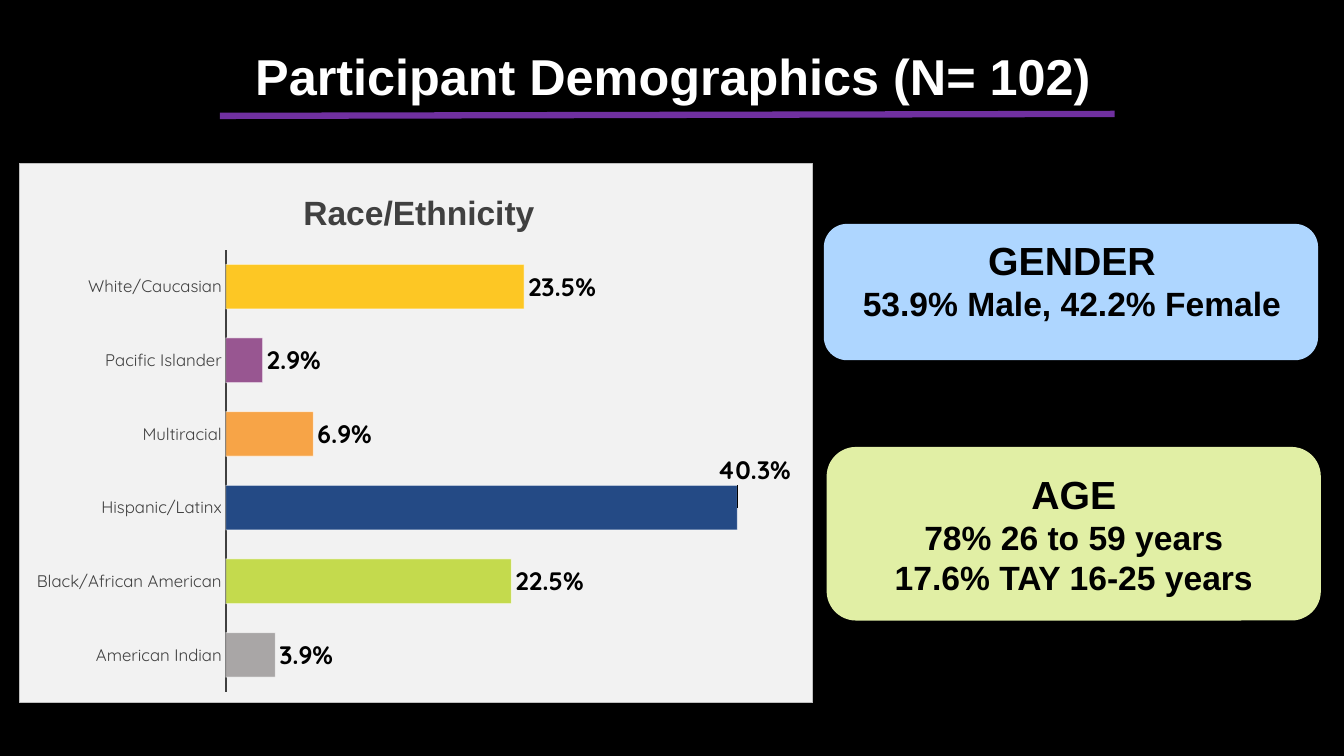
from dataclasses import dataclass

from lxml.etree import SubElement
from pptx import Presentation
from pptx.chart.chart import Chart
from pptx.chart.data import CategoryChartData
from pptx.dml.color import RGBColor
from pptx.dml.fill import FillFormat
from pptx.enum.chart import XL_CHART_TYPE, XL_LABEL_POSITION, XL_TICK_LABEL_POSITION, XL_TICK_MARK
from pptx.enum.shapes import MSO_CONNECTOR, MSO_SHAPE
from pptx.enum.text import MSO_ANCHOR, PP_ALIGN
from pptx.oxml import parse_xml
from pptx.oxml.ns import nsdecls, qn
from pptx.shapes.autoshape import Shape
from pptx.slide import Slide
from pptx.text.text import Font, TextFrame
from pptx.util import Cm, Pt


@dataclass
class Box:
    left: float
    top: float
    width: float
    height: float

    def lengths(self) -> tuple[Cm, Cm, Cm, Cm]:
        return Cm(self.left), Cm(self.top), Cm(self.width), Cm(self.height)


@dataclass
class Group:
    name: str
    share: float
    color: str


@dataclass
class Line:
    text: str
    size: int


GROUPS = [
    Group("American Indian", 0.039, "9D9999"),
    Group("Black/African American", 0.225, "BCD631"),
    Group("Hispanic/Latinx", 0.403, "002D73"),
    Group("Multiracial", 0.069, "F8972A"),
    Group("Pacific Islander", 0.029, "893B81"),
    Group("White/Caucasian", 0.235, "FFC000"),
]
RAISED_LABEL = 2
PERCENT = "0.0%"
GENDER = [Line("GENDER", 28), Line("53.9% Male, 42.2% Female", 24)]
AGE = [Line("AGE", 28), Line("78% 26 to 59 years", 24), Line("17.6% TAY 16-25 years", 24)]


def rgb(color: str) -> RGBColor:
    return RGBColor.from_string(color)


def set_fill(fill: FillFormat, color: str, alpha: int = 100) -> None:
    fill.solid()
    fill.fore_color.rgb = rgb(color)
    if alpha < 100:
        for node in fill._xPr.iter(qn("a:srgbClr")):
            SubElement(node, qn("a:alpha")).set("val", str(alpha * 1000))


def set_font(font: Font, name: str, size: int, color: str, bold: bool = False) -> None:
    font.name, font.size, font.bold = name, Pt(size), bold
    font.color.rgb = rgb(color)


def write_lines(frame: TextFrame, lines: list[Line], color: str, anchor: MSO_ANCHOR) -> None:
    frame.word_wrap = True
    frame.vertical_anchor = anchor
    for index, line in enumerate(lines):
        paragraph = frame.add_paragraph() if index else frame.paragraphs[0]
        paragraph.text = line.text
        paragraph.alignment = PP_ALIGN.CENTER
        set_font(paragraph.font, "Arial", line.size, color, True)


def add_card(slide: Slide, box: Box, color: str) -> Shape:
    card = slide.shapes.add_shape(MSO_SHAPE.FLOWCHART_ALTERNATE_PROCESS, *box.lengths())
    card.shadow.inherit = False
    set_fill(card.fill, color)
    card.line.color.rgb = rgb(color)
    card.line.width = Pt(1)
    return card


def manual_layout(left: float, top: float, size: str = "", modes: str = "") -> str:
    return (f'<c:layout {nsdecls("c")}><c:manualLayout>{modes}'
            f'<c:x val="{left}"/><c:y val="{top}"/>{size}</c:manualLayout></c:layout>')


def place_chart_parts(chart: Chart) -> None:
    edges = '<c:xMode val="edge"/><c:yMode val="edge"/>'
    plot_area = chart.element.find(".//" + qn("c:plotArea"))
    for layout in plot_area.findall(qn("c:layout")):
        plot_area.remove(layout)
    plot_area.insert(0, parse_xml(manual_layout(
        0.26, 0.16, '<c:w val="0.72"/><c:h val="0.82"/>',
        '<c:layoutTarget val="inner"/>' + edges)))
    title = chart.chart_title._element
    for layout in title.findall(qn("c:layout")):
        title.remove(layout)
    title.find(qn("c:tx")).addnext(parse_xml(manual_layout(0.35, 0.04, modes=edges)))
    chart.element.find(qn("c:chart")).addnext(parse_xml(
        f'<c:spPr {nsdecls("c", "a")}>'
        '<a:solidFill><a:srgbClr val="F2F2F2"/></a:solidFill>'
        '<a:ln w="9525"><a:solidFill><a:srgbClr val="BFBFBF"/></a:solidFill></a:ln></c:spPr>'))


def format_bars(chart: Chart) -> None:
    plot = chart.plots[0]
    plot.gap_width = 65
    plot.vary_by_categories = False
    series = plot.series[0]
    set_fill(series.format.fill, "76266E", 85)
    for index, group in enumerate(GROUPS):
        bar = series.points[index].format
        set_fill(bar.fill, group.color, 85)
        bar.line.width = Pt(0.75)
        set_fill(bar.line.fill, "FFFFFF", 50)
    labels = series.data_labels
    labels.show_value = True
    labels.number_format, labels.number_format_is_linked = PERCENT, False
    labels.position = XL_LABEL_POSITION.OUTSIDE_END
    set_font(labels.font, "Quicksand", 18, "000000", True)
    raised = series.points[RAISED_LABEL].data_label
    raised.position = XL_LABEL_POSITION.OUTSIDE_END
    set_font(raised.font, "Quicksand", 18, "000000", True)
    node = labels._element.find(qn("c:dLbl"))
    node.insert(1, parse_xml(manual_layout(-0.03, -0.07)))
    node.insert(2, parse_xml(
        f'<c:numFmt {nsdecls("c")} formatCode="{PERCENT}" sourceLinked="0"/>'))


def add_race_chart(slide: Slide, box: Box) -> None:
    data = CategoryChartData(number_format=PERCENT)
    data.categories = [group.name for group in GROUPS]
    data.add_series("Series 1", [group.share for group in GROUPS])
    chart = slide.shapes.add_chart(XL_CHART_TYPE.BAR_CLUSTERED, *box.lengths(), data).chart
    set_font(chart.font, "Calibri", 10, "000000")
    chart.has_legend = False
    chart.has_title = True
    heading = chart.chart_title.text_frame.paragraphs[0]
    heading.text = "Race/Ethnicity"
    set_font(heading.font, "Arial", 24, "404040", True)
    category_axis = chart.category_axis
    category_axis.major_tick_mark = XL_TICK_MARK.NONE
    category_axis.tick_label_position = XL_TICK_LABEL_POSITION.NEXT_TO_AXIS
    set_font(category_axis.tick_labels.font, "Quicksand", 12, "404040")
    category_axis.format.line.color.rgb = rgb("404040")
    category_axis.format.line.width = Pt(1.5)
    value_axis = chart.value_axis
    value_axis.minimum_scale, value_axis.maximum_scale = 0, 0.45
    value_axis.has_major_gridlines = False
    value_axis.visible = False
    format_bars(chart)
    place_chart_parts(chart)


def add_underline(slide: Slide) -> None:
    underline = slide.shapes.add_connector(
        MSO_CONNECTOR.STRAIGHT, Cm(5.54), Cm(2.92), Cm(28.09), Cm(2.87))
    underline.line.color.rgb = rgb("7030A0")
    underline.line.width = Pt(4.5)
    SubElement(underline._element.spPr, qn("a:effectLst"))


def main() -> None:
    presentation = Presentation()
    presentation.slide_width, presentation.slide_height = Cm(33.87), Cm(19.05)
    slide = presentation.slides.add_slide(presentation.slide_layouts[5])
    set_fill(slide.background.fill, "000000")
    title = slide.shapes.title
    title.left, title.top, title.width, title.height = Box(5.84, 0.91, 22.25, 1.96).lengths()
    write_lines(title.text_frame, [Line("Participant Demographics (N= 102)", 36)],
                "FFFFFF", MSO_ANCHOR.MIDDLE)
    add_card(slide, Box(20.78, 5.66, 12.42, 3.4), "AED6FF")
    gender = slide.shapes.add_textbox(*Box(21.06, 5.82, 11.91, 3.84).lengths())
    write_lines(gender.text_frame, GENDER, "000000", MSO_ANCHOR.TOP)
    add_race_chart(slide, Box(0.48, 4.11, 20.02, 13.61))
    age = add_card(slide, Box(20.85, 11.28, 12.42, 4.34), "E1EFA5")
    write_lines(age.text_frame, AGE, "000000", MSO_ANCHOR.MIDDLE)
    add_underline(slide)
    presentation.save("out.pptx")


if __name__ == "__main__":
    main()
